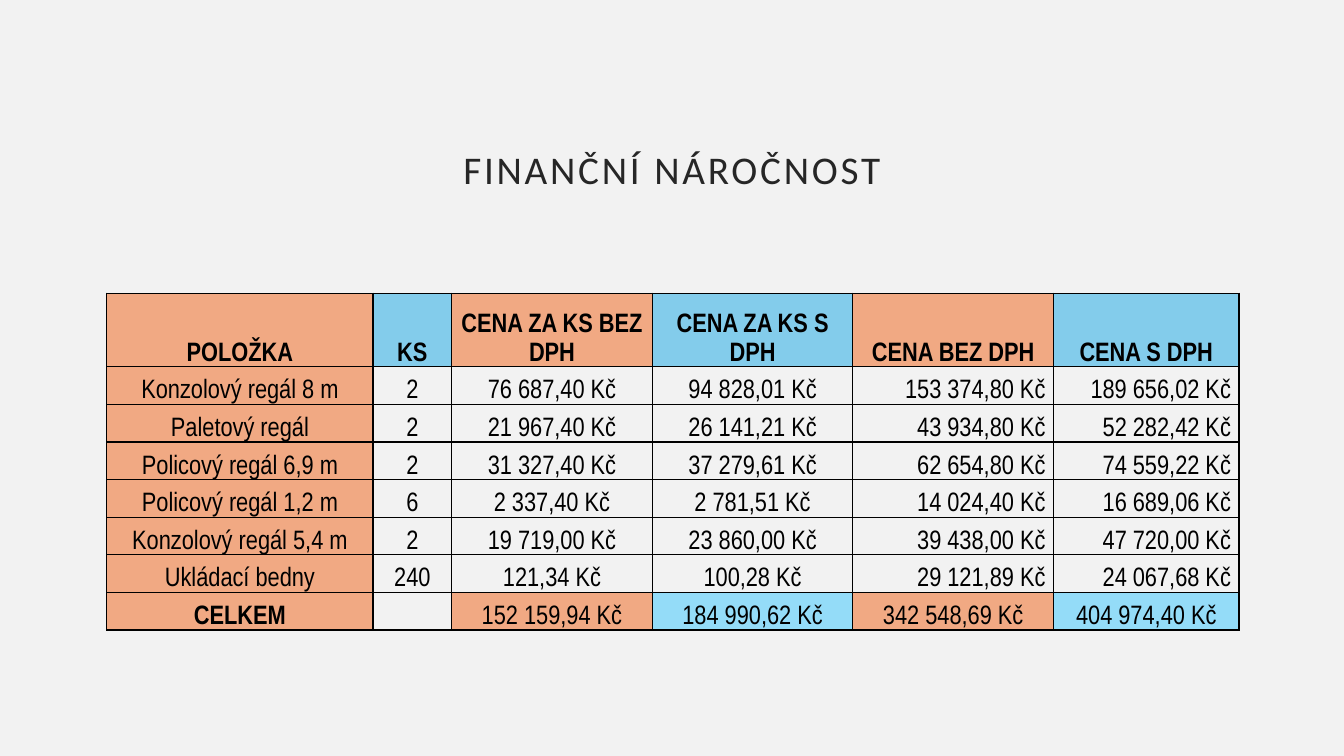
"""Builds the slide with the table of shelving costs."""
import dataclasses

import lxml.etree
import pptx
import pptx.dml.color
import pptx.enum.text
import pptx.oxml.ns
import pptx.util

Inches = pptx.util.Inches
Pt = pptx.util.Pt
ALIGN = pptx.enum.text.PP_ALIGN
ANCHOR = pptx.enum.text.MSO_ANCHOR


@dataclasses.dataclass(frozen=True)
class Theme:
    background: str = "F2F2F2"
    title_color: str = "262626"
    ink: str = "000000"
    orange: str = "F1A983"
    blue: str = "83CCEB"
    light_blue: str = "94DCF8"
    title_font: str = "Calibri"
    table_font: str = "Arial Narrow"
    title_size: int = 28
    table_size: int = 19
    title_tracking: int = 2
    border: int = 1


def rgb(value):
    return pptx.dml.color.RGBColor.from_string(value)


def apply(target, formats):
    for name, value in formats.items():
        setattr(target, name, value)


class CostSlide:
    def __init__(self, prs, theme):
        self.theme = theme
        self.slide = prs.slides.add_slide(prs.slide_layouts[5])
        fill = self.slide.background.fill
        fill.solid()
        fill.fore_color.rgb = rgb(theme.background)

    def add_text(self, p, text, color, paragraph, font):
        apply(p, paragraph)
        r = p.add_run()
        r.text = text
        apply(r.font, font)
        r.font.color.rgb = rgb(color)
        return r

    def title(self, text, left, top, width, height):
        t = self.theme
        sp = self.slide.shapes.title
        apply(sp, {"left": Inches(left), "top": Inches(top),
                   "width": Inches(width), "height": Inches(height)})
        tf = sp.text_frame
        inset = Inches(0.2)
        apply(tf, {"word_wrap": True, "vertical_anchor": ANCHOR.MIDDLE,
                   "auto_size": pptx.enum.text.MSO_AUTO_SIZE.NONE,
                   "margin_left": inset, "margin_right": inset,
                   "margin_top": inset, "margin_bottom": inset})
        r = self.add_text(
            tf.paragraphs[0], text, t.title_color,
            {"alignment": ALIGN.CENTER, "line_spacing": 0.9, "space_after": Pt(6)},
            {"name": t.title_font, "size": Pt(t.title_size), "bold": False})
        r.font._element.set("spc", str(t.title_tracking * 100))

    def borders(self, cell):
        tc_pr = cell._tc.get_or_add_tcPr()
        qn = pptx.oxml.ns.qn
        for side in ("lnL", "lnR", "lnT", "lnB"):
            ln = lxml.etree.SubElement(tc_pr, qn(f"a:{side}"), w=str(Pt(self.theme.border)))
            solid = lxml.etree.SubElement(ln, qn("a:solidFill"))
            lxml.etree.SubElement(solid, qn("a:srgbClr"), val=self.theme.ink)

    def cell(self, cell, text, fill, alignment, bold):
        t = self.theme
        apply(cell, {"vertical_anchor": ANCHOR.BOTTOM,
                     "margin_left": Inches(0.08), "margin_right": Inches(0.08),
                     "margin_top": Inches(0.02), "margin_bottom": 0})
        self.borders(cell)
        if fill:
            cell.fill.solid()
            cell.fill.fore_color.rgb = rgb(fill)
        else:
            cell.fill.background()
        if text:
            self.add_text(
                cell.text_frame.paragraphs[0], text, t.ink,
                {"alignment": alignment, "line_spacing": 1.15, "space_after": Pt(10)},
                {"name": t.table_font, "size": Pt(t.table_size), "bold": bold})

    def table(self, rows, left, top, height, widths, header_height):
        t = self.theme
        last = len(rows) - 1
        table = self.slide.shapes.add_table(
            len(rows), len(widths), Inches(left), Inches(top),
            Inches(sum(widths)), Inches(height)).table
        apply(table, {"first_row": False, "horz_banding": False})
        for column, width in zip(table.columns, widths):
            column.width = Inches(width)
        for i, row in enumerate(rows):
            table.rows[i].height = Inches(
                (height - header_height) / last if i else header_height)
            for j, text in enumerate(row):
                fill = None
                if j == 0 or (text and i in (0, last)):
                    accent = t.light_blue if i == last else t.blue
                    fill = accent if j % 2 else t.orange
                amount = 0 < i < last and j >= 4
                self.cell(table.cell(i, j), text, fill,
                          ALIGN.RIGHT if amount else ALIGN.CENTER,
                          i == 0 or (i == last and j == 0))


COSTS = [
    ("POLOŽKA", "KS", "CENA ZA KS BEZ DPH", "CENA ZA KS S DPH", "CENA BEZ DPH", "CENA S DPH"),
    ("Konzolový regál 8 m", "2", "76 687,40 Kč", "94 828,01 Kč", "153 374,80 Kč", "189 656,02 Kč"),
    ("Paletový regál", "2", "21 967,40 Kč", "26 141,21 Kč", "43 934,80 Kč", "52 282,42 Kč"),
    ("Policový regál 6,9 m", "2", "31 327,40 Kč", "37 279,61 Kč", "62 654,80 Kč", "74 559,22 Kč"),
    ("Policový regál 1,2 m", "6", "2 337,40 Kč", "2 781,51 Kč", "14 024,40 Kč", "16 689,06 Kč"),
    ("Konzolový regál 5,4 m", "2", "19 719,00 Kč", "23 860,00 Kč", "39 438,00 Kč", "47 720,00 Kč"),
    ("Ukládací bedny", "240", "121,34 Kč", "100,28 Kč", "29 121,89 Kč", "24 067,68 Kč"),
    ("CELKEM", "", "152 159,94 Kč", "184 990,62 Kč", "342 548,69 Kč", "404 974,40 Kč"),
]


def main():
    prs = pptx.Presentation()
    apply(prs, {"slide_width": Inches(13.33), "slide_height": Inches(7.5)})
    s = CostSlide(prs, Theme())
    s.title("FINANČNÍ NÁROČNOST", 2.44, 1.05, 8.45, 1.3)
    s.table(COSTS, 1.06, 2.91, 3.34, [2.64, 0.78, 1.99, 1.99, 1.99, 1.84], 0.73)
    prs.save("out.pptx")


if __name__ == "__main__":
    main()
